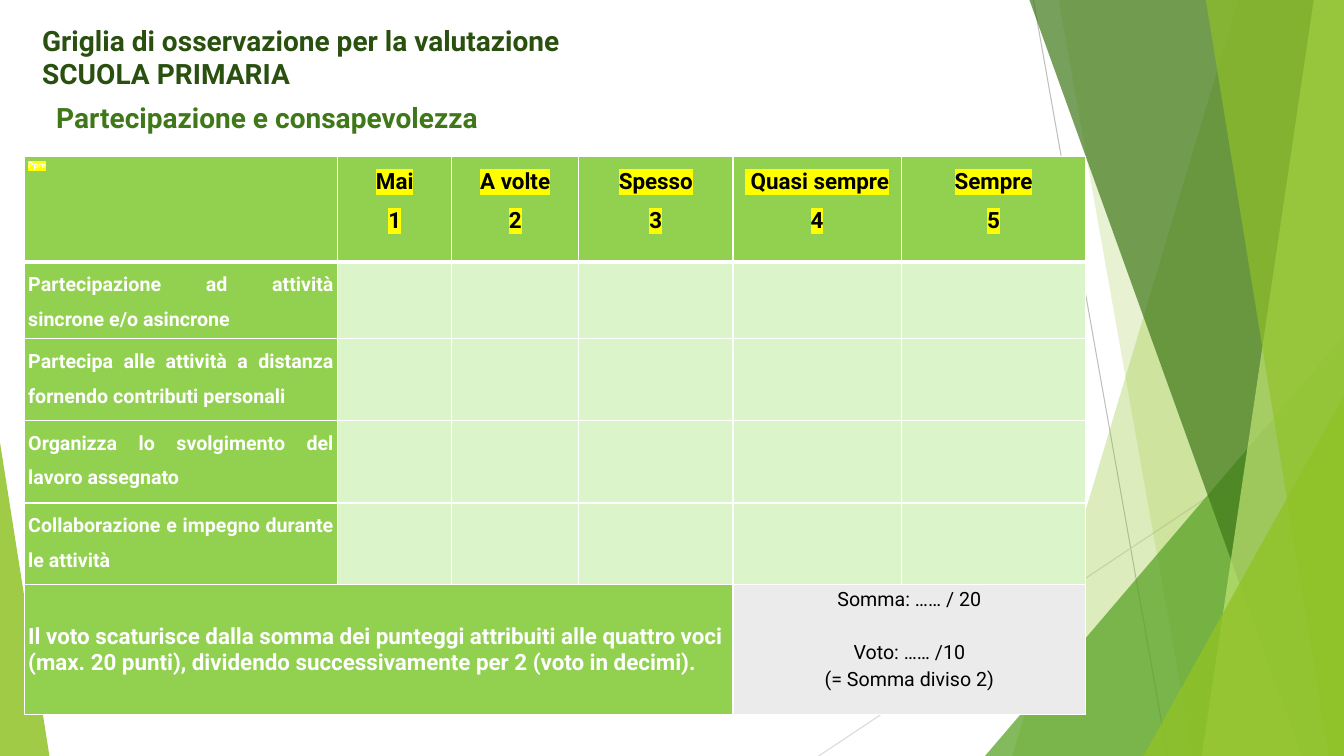
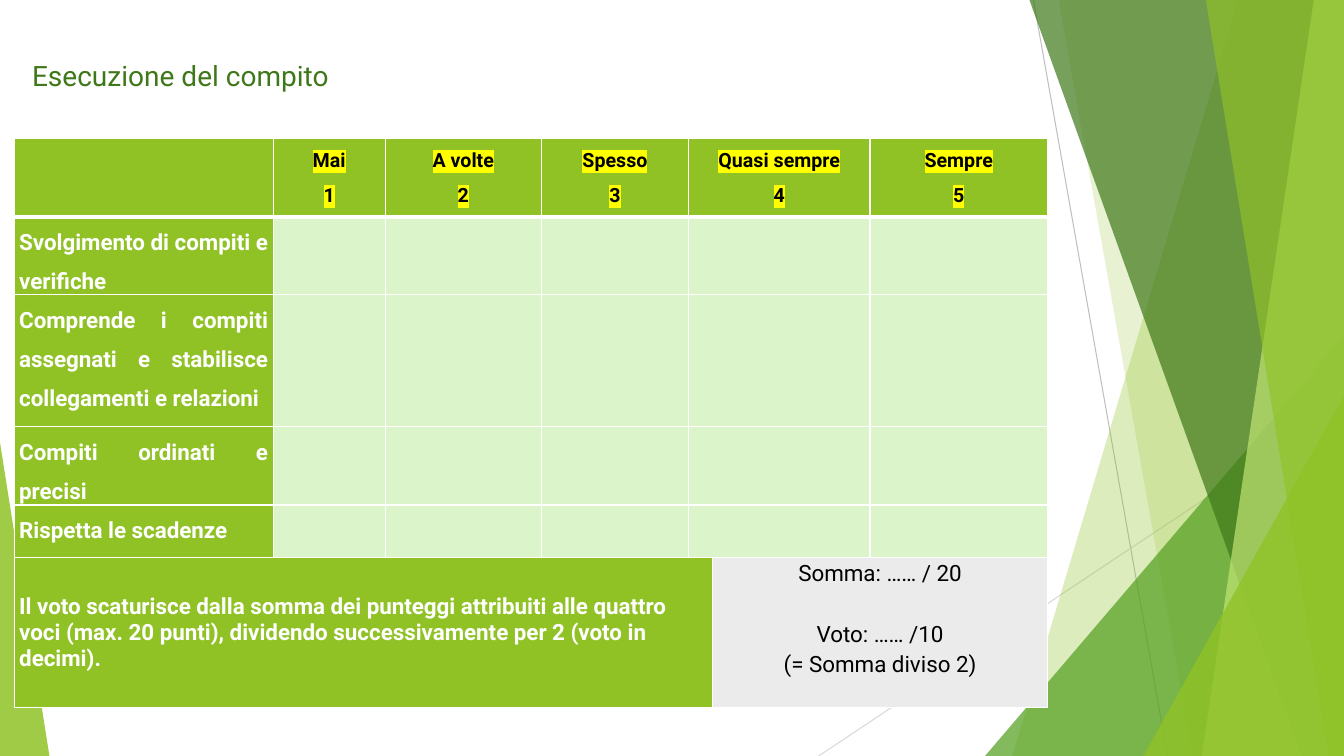
from dataclasses import dataclass

from lxml.etree import SubElement
from pptx import Presentation
from pptx.dml.color import RGBColor
from pptx.enum.shapes import MSO_CONNECTOR, MSO_SHAPE
from pptx.enum.text import MSO_ANCHOR, PP_ALIGN
from pptx.oxml import parse_xml
from pptx.oxml.ns import nsdecls, qn
from pptx.util import Inches, Pt


@dataclass(frozen=True)
class Theme:
    """Colours, font and type sizes shared by the slides."""

    font: str = "Roboto"
    white: str = "FFFFFF"
    black: str = "000000"
    lime: str = "90C226"
    pale_lime: str = "C0E474"
    leaf: str = "92D050"
    green: str = "54A021"
    forest: str = "3F7819"
    deep_forest: str = "2A5010"
    mint: str = "DBF4CA"
    grey: str = "EBEBEB"
    highlight: str = "FFFF00"
    ray: str = "BFBFBF"
    pale_ray: str = "D9D9D9"
    tiny: int = 6
    small: int = 14
    medium: int = 16
    large: int = 20


THEME = Theme()


@dataclass(frozen=True)
class TextStyle:
    """Look of a piece of text."""

    size: int
    color: str
    bold: bool = True
    highlight: bool = False
    alignment: PP_ALIGN = PP_ALIGN.LEFT
    spacing: float = 1.0


@dataclass(frozen=True)
class Grid:
    """Content and measures of one assessment table."""

    left: float
    top: float
    columns: tuple
    rows: tuple
    level_spans: tuple
    levels: tuple
    criteria: tuple
    color: str
    margin: float
    level_size: int
    criterion_size: int
    total_size: int
    corner: str = ""


VOTE_RULE = (
    "Il voto scaturisce dalla somma dei punteggi attribuiti alle quattro voci "
    "(max. 20 punti), dividendo successivamente per 2 (voto in decimi)."
)
TOTALS = ("Somma: …… / 20", "Voto: …… /10", "(= Somma diviso 2)")

PARTICIPATION = Grid(
    left=0.24,
    top=1.55,
    columns=(3.11, 1.13, 1.26, 1.53, 1.67, 1.83),
    rows=(1.05, 0.76, 0.81, 0.82, 0.81, 1.29),
    level_spans=(1, 1, 1, 1, 1),
    levels=("Mai", "A volte", "Spesso", " Quasi sempre", "Sempre"),
    criteria=(
        "Partecipazione ad attività sincrone e/o asincrone",
        "Partecipa alle attività a distanza fornendo contributi personali",
        "Organizza lo svolgimento del lavoro assegnato",
        "Collaborazione e impegno durante le attività",
    ),
    color=THEME.leaf,
    margin=0.04,
    level_size=THEME.medium,
    criterion_size=THEME.small,
    total_size=THEME.small,
    corner="Ppre",
)

EXECUTION = Grid(
    left=0.14,
    top=1.37,
    columns=(2.57, 1.11, 1.55, 1.46, 0.24, 1.56, 1.76),
    rows=(0.78, 0.77, 1.31, 0.77, 0.52, 1.49),
    level_spans=(1, 1, 1, 2, 1),
    levels=("Mai", "A volte", "Spesso", "Quasi sempre", "Sempre"),
    criteria=(
        "Svolgimento di compiti e verifiche",
        "Comprende i compiti assegnati e stabilisce collegamenti e relazioni",
        "Compiti ordinati e precisi",
        "Rispetta le scadenze",
    ),
    color=THEME.lime,
    margin=0.05,
    level_size=THEME.small,
    criterion_size=THEME.medium,
    total_size=THEME.medium,
)


def write_text(text_frame, lines, style):
    """Write one paragraph per line and format it."""
    text_frame.text = "\n".join(lines)
    for paragraph in text_frame.paragraphs:
        paragraph.alignment = style.alignment
        paragraph.line_spacing = style.spacing
        for run in paragraph.runs:
            font = run.font
            font.name = THEME.font
            font.size = Pt(style.size)
            font.bold = style.bold
            font.color.rgb = RGBColor.from_string(style.color)
            if style.highlight:
                mark = parse_xml(
                    f'<a:highlight {nsdecls("a")}><a:srgbClr val="{THEME.highlight}"/></a:highlight>'
                )
                run.font.color.rgb
                run_properties = run.text and paragraph.runs[0].font and run
                fill = run_properties._r.rPr.find(qn("a:solidFill"))
                fill.addnext(mark)


def paint(shape, color, opacity):
    """Give a shape a translucent fill without outline or shadow."""
    shape.shadow.inherit = False
    shape.fill.solid()
    shape.fill.fore_color.rgb = RGBColor.from_string(color)
    shape.line.fill.background()
    color_element = shape.element.spPr.find(qn("a:solidFill")).find(qn("a:srgbClr"))
    SubElement(color_element, qn("a:alpha"), val=str(opacity * 1000))


def add_ray(shapes, start, end, color):
    """Add a thin straight line."""
    points = [Inches(value) for value in (*start, *end)]
    connector = shapes.add_connector(MSO_CONNECTOR.STRAIGHT, *points)
    connector.line.color.rgb = RGBColor.from_string(color)
    connector.line.width = Pt(0.75)
    SubElement(connector.element.spPr, qn("a:effectLst"))


def add_band(shapes, top_x, bottom_x, color, opacity):
    """Add a full-height band from a slanted left edge to the slide's right edge."""
    corners = [(13.33, 0), (13.33, 7.5), (bottom_x, 7.5)]
    builder = shapes.build_freeform(Inches(top_x), 0)
    builder.add_line_segments([(Inches(x), Inches(y)) for x, y in corners])
    paint(builder.convert_to_shape(), color, opacity)


def add_triangle(shapes, left, top, width, apex, color, opacity):
    """Add a triangle that stands on the bottom edge of the slide."""
    box = [Inches(value) for value in (left, top, width, 7.5 - top)]
    triangle = shapes.add_shape(MSO_SHAPE.ISOSCELES_TRIANGLE, *box)
    triangle.adjustments[0] = apex
    paint(triangle, color, opacity)


def decorate_layout(layout, slide):
    """Draw the shared facets and move them from the slide to its layout."""
    for placeholder in list(layout.placeholders):
        placeholder.element.getparent().remove(placeholder.element)
    group = slide.shapes.add_group_shape()
    shapes = group.shapes
    add_ray(shapes, (10.25, 0), (11.58, 7.5), THEME.ray)
    add_ray(shapes, (13.33, 4.03), (8.12, 7.5), THEME.pale_ray)
    add_band(shapes, 12.28, 10.04, THEME.lime, 30)
    add_band(shapes, 10.5, 11.83, THEME.lime, 20)
    add_triangle(shapes, 9.77, 3.33, 3.56, 1, THEME.green, 72)
    add_band(shapes, 10.21, 12.91, THEME.forest, 70)
    add_band(shapes, 13.03, 11.92, THEME.pale_lime, 70)
    add_band(shapes, 11.96, 13.18, THEME.lime, 65)
    add_triangle(shapes, 11.34, 3.93, 1.99, 1, THEME.lime, 80)
    add_triangle(shapes, 0, 4.39, 0.49, 0, THEME.lime, 85)
    layout.shapes.element.append(group.element)


def add_heading(slide, left, top, width, height, lines, color, bold=True):
    """Add a heading in a text box."""
    box = [Inches(value) for value in (left, top, width, height)]
    text_frame = slide.shapes.add_textbox(*box).text_frame
    text_frame.word_wrap = True
    write_text(text_frame, lines, TextStyle(THEME.large, color, bold))


def format_cell(cell, color, margin, top_width, bottom_width):
    """Set the fill, margins and white borders of a cell."""
    cell.fill.solid()
    cell.fill.fore_color.rgb = RGBColor.from_string(color)
    cell.margin_left = cell.margin_right = Inches(margin)
    cell.margin_top = cell.margin_bottom = 0
    properties = cell._tc.get_or_add_tcPr()
    widths = {"lnL": 1, "lnR": 1, "lnT": top_width, "lnB": bottom_width}
    for index, (side, width) in enumerate(widths.items()):
        border = parse_xml(
            f'<a:{side} {nsdecls("a")} w="{Pt(width)}"><a:solidFill>'
            f'<a:srgbClr val="{THEME.white}"/></a:solidFill></a:{side}>'
        )
        properties.insert(index, border)


def format_cells(table, grid):
    """Colour every cell by its role in the grid."""
    last_row = len(grid.rows) - 1
    total_column = len(grid.columns) - 2
    for row in range(len(grid.rows)):
        for column in range(len(grid.columns)):
            color = grid.color
            if row == last_row and column >= total_column:
                color = THEME.grey
            elif 0 < row < last_row and column > 0:
                color = THEME.mint
            top_width = 3 if row == 1 else 1
            bottom_width = 3 if row == 0 else 1
            format_cell(table.cell(row, column), color, grid.margin, top_width, bottom_width)


def fill_levels(table, grid):
    """Write the scored levels and merge the columns they span."""
    style = TextStyle(grid.level_size, THEME.black, True, True, PP_ALIGN.CENTER, 1.5)
    column = 1
    for score, (level, span) in enumerate(zip(grid.levels, grid.level_spans), 1):
        if span > 1:
            for row in range(len(grid.rows) - 1):
                table.cell(row, column).merge(table.cell(row, column + span - 1))
        write_text(table.cell(0, column).text_frame, (level, str(score)), style)
        column += span


def fill_summary(table, grid):
    """Write the vote rule and the totals in the last row."""
    row = len(grid.rows) - 1
    total_column = len(grid.columns) - 2
    rule_cell = table.cell(row, 0)
    rule_cell.merge(table.cell(row, total_column - 1))
    rule_cell.vertical_anchor = MSO_ANCHOR.MIDDLE
    write_text(rule_cell.text_frame, (VOTE_RULE,), TextStyle(THEME.medium, THEME.white))
    total_cell = table.cell(row, total_column)
    total_cell.merge(table.cell(row, total_column + 1))
    style = TextStyle(grid.total_size, THEME.black, False, False, PP_ALIGN.CENTER, 1.15)
    write_text(total_cell.text_frame, TOTALS, style)
    total_cell.text_frame.paragraphs[1].space_before = Pt(round(grid.total_size * 1.35))


def add_grid(slide, grid):
    """Add an assessment table."""
    box = [Inches(value) for value in (grid.left, grid.top, sum(grid.columns), sum(grid.rows))]
    table = slide.shapes.add_table(len(grid.rows), len(grid.columns), *box).table
    table.first_row = table.horz_banding = False
    for column, width in zip(table.columns, grid.columns):
        column.width = Inches(width)
    for row, height in zip(table.rows, grid.rows):
        row.height = Inches(height)
    format_cells(table, grid)
    if grid.corner:
        style = TextStyle(THEME.tiny, THEME.white, highlight=True, spacing=1.5)
        write_text(table.cell(0, 0).text_frame, (grid.corner,), style)
    fill_levels(table, grid)
    style = TextStyle(grid.criterion_size, THEME.white, alignment=PP_ALIGN.JUSTIFY, spacing=1.5)
    for row, criterion in enumerate(grid.criteria, 1):
        write_text(table.cell(row, 0).text_frame, (criterion,), style)
    fill_summary(table, grid)


def main():
    """Build and save the presentation."""
    presentation = Presentation()
    presentation.slide_width, presentation.slide_height = Inches(13.33), Inches(7.5)
    layout = presentation.slide_layouts[6]
    participation_slide = presentation.slides.add_slide(layout)
    decorate_layout(layout, participation_slide)
    add_grid(participation_slide, PARTICIPATION)
    title = ("Griglia di osservazione per la valutazione", "SCUOLA PRIMARIA")
    add_heading(participation_slide, 0.32, 0.18, 9.7, 1.11, title, THEME.deep_forest)
    subtitle = ("Partecipazione e consapevolezza",)
    add_heading(participation_slide, 0.46, 0.95, 7.14, 0.74, subtitle, THEME.forest)
    execution_slide = presentation.slides.add_slide(layout)
    add_grid(execution_slide, EXECUTION)
    subtitle = ("Esecuzione del compito",)
    add_heading(execution_slide, 0.22, 0.53, 6.06, 0.74, subtitle, THEME.forest, False)
    presentation.save("out.pptx")


if __name__ == "__main__":
    main()
